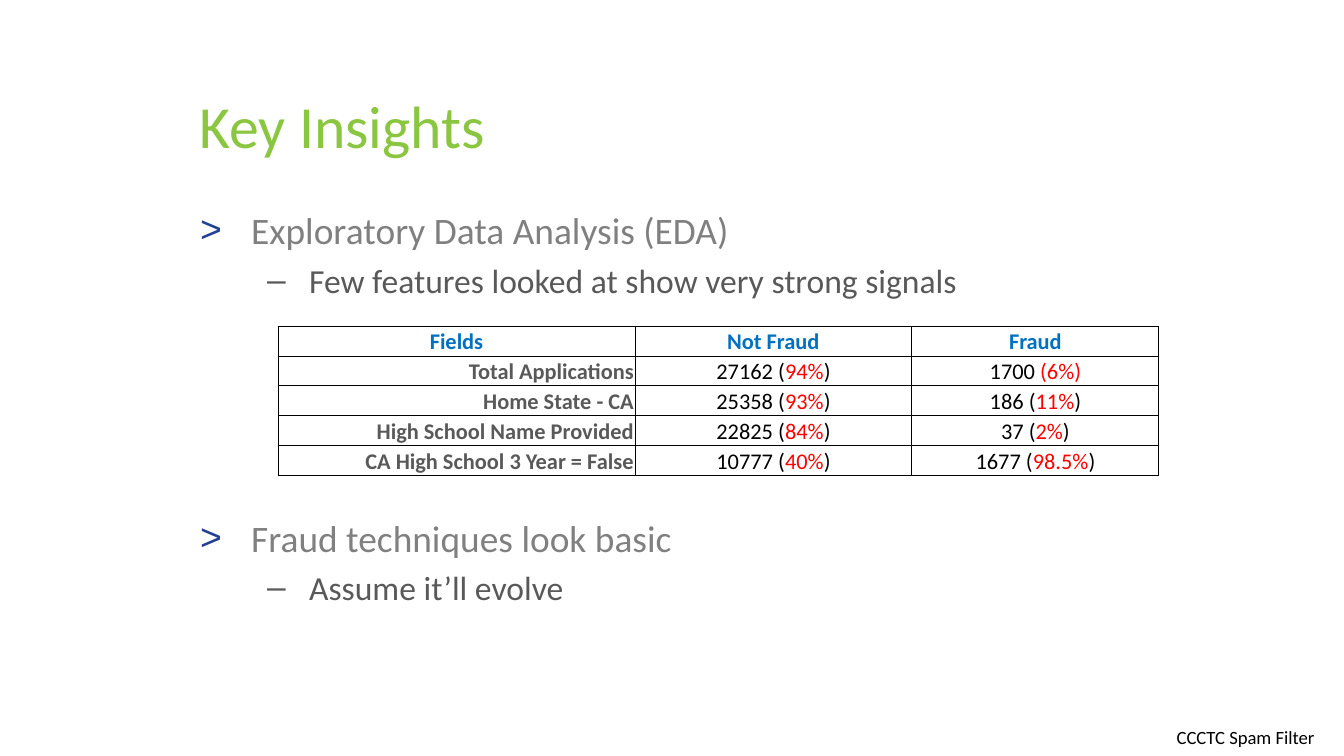
import pptx
import pptx.util
import pptx.dml.color
import pptx.enum.text
import pptx.oxml
import pptx.oxml.ns
from lxml import etree

SCALE = 914400 / 134.4
ALIGN = pptx.enum.text.PP_ALIGN
FONT = "Calibri"
GREEN, NAVY, BLUE, RED = "8AC640", "234295", "0070C0", "FF0000"
GRAY, DARK, BLACK = "808080", "595959", "000000"

# Text between bars is red.
ROWS = [
    ("Fields", "Not Fraud", "Fraud"),
    ("Total Applications", "27162 (|94%|)", "1700 |(6%)|"),
    ("Home State - CA", "25358 (|93%|)", "186 (|11%|)"),
    ("High School Name Provided", "22825 (|84%|)", "37 (|2%|)"),
    ("CA High School 3 Year = False", "10777 (|40%|)", "1677 (|98.5%|)"),
]
# Text, level, space before in points
POINTS = [
    ("Exploratory Data Analysis (EDA)", 0, 0),
    ("Few features looked at show very strong signals", 1, 4),
    ("Fraud techniques look basic", 0, 115),
    ("Assume it’ll evolve", 1, 4),
]
# Bullet, bullet colour, left edge, hanging indent, size, text colour
LEVELS = [(">", NAVY, 51, 51, 20, GRAY), ("–", DARK, 109, 42, 18, DARK)]


def px(n):
    return pptx.util.Emu(round(n * SCALE))


def rgb(code):
    return pptx.dml.color.RGBColor.from_string(code)


def style(font, size, color=None, bold=False):
    font.name = FONT
    font.size = pptx.util.Pt(size)
    font.bold = bold
    if color:
        font.color.rgb = rgb(color)


def add(parent, tag, **attrs):
    node = etree.SubElement(parent, pptx.oxml.ns.qn("a:" + tag))
    for key, value in attrs.items():
        node.set(key, str(value))
    return node


def frame(slide, x, y, w, h):
    text = slide.shapes.add_textbox(px(x), px(y), px(w), px(h)).text_frame
    text.word_wrap = True
    return text


def label(slide, box, text, size, color, align):
    para = frame(slide, *box).paragraphs[0]
    para.text = text
    para.alignment = align
    style(para.font, size, color)


def bullet(para, text, level, space):
    mark, tint, left, hang, size, color = LEVELS[level]
    para.text = text
    para.level = level
    props = para._p.get_or_add_pPr()
    props.set("marL", str(px(left)))
    props.set("indent", str(-px(hang)))
    add(add(props, "buClr"), "srgbClr", val=tint)
    add(props, "buFont", typeface="Arial")
    add(props, "buChar", char=mark)
    style(para.font, size, color)
    if space:
        para.space_before = pptx.util.Pt(space)


def points(slide, box):
    text = frame(slide, *box)
    for i, point in enumerate(POINTS):
        para = text.add_paragraph() if i else text.paragraphs[0]
        bullet(para, *point)


def border(cell):
    props = cell._tc.get_or_add_tcPr()
    for side in ("lnL", "lnR", "lnT", "lnB"):
        line = add(props, side, w=pptx.util.Pt(0.5))
        add(add(line, "solidFill"), "srgbClr", val=BLACK)


def fill(cell, text, head, first):
    border(cell)
    cell.fill.background()
    cell.vertical_anchor = pptx.enum.text.MSO_ANCHOR.BOTTOM
    cell.margin_left = cell.margin_right = cell.margin_top = px(1)
    cell.margin_bottom = 0
    para = cell.text_frame.paragraphs[0]
    para.alignment = ALIGN.RIGHT if first and not head else ALIGN.CENTER
    color = BLUE if head else DARK if first else BLACK
    style(para.font, 12, bold=head or first)
    for i, part in enumerate(text.split("|")):
        if part:
            run = para.add_run()
            run.text = part
            run.font.color.rgb = rgb(RED if i % 2 else color)


def grid(slide, x, y, widths, height):
    shape = slide.shapes.add_table(len(ROWS), len(widths), px(x), px(y),
                                   px(sum(widths)), px(height * len(ROWS)))
    table = shape.table
    table.first_row = table.horz_banding = False
    for col, width in zip(table.columns, widths):
        col.width = px(width)
    for r, row in enumerate(ROWS):
        table.rows[r].height = px(height)
        for c, text in enumerate(row):
            fill(table.cell(r, c), text, r == 0, c == 0)


def main():
    deck = pptx.Presentation()
    deck.slide_width, deck.slide_height = px(1344), px(756)
    slide = deck.slides.add_slide(deck.slide_layouts[6])
    label(slide, (1156, 719, 179, 36), "CCCTC Spam Filter", 10, BLACK, ALIGN.CENTER)
    label(slide, (186, 82, 1017, 103), "Key Insights", 32, GREEN, ALIGN.LEFT)
    points(slide, (187, 201, 1066, 523))
    grid(slide, 278, 326, (357, 277, 247), 30)
    deck.save("out.pptx")


if __name__ == "__main__":
    main()
